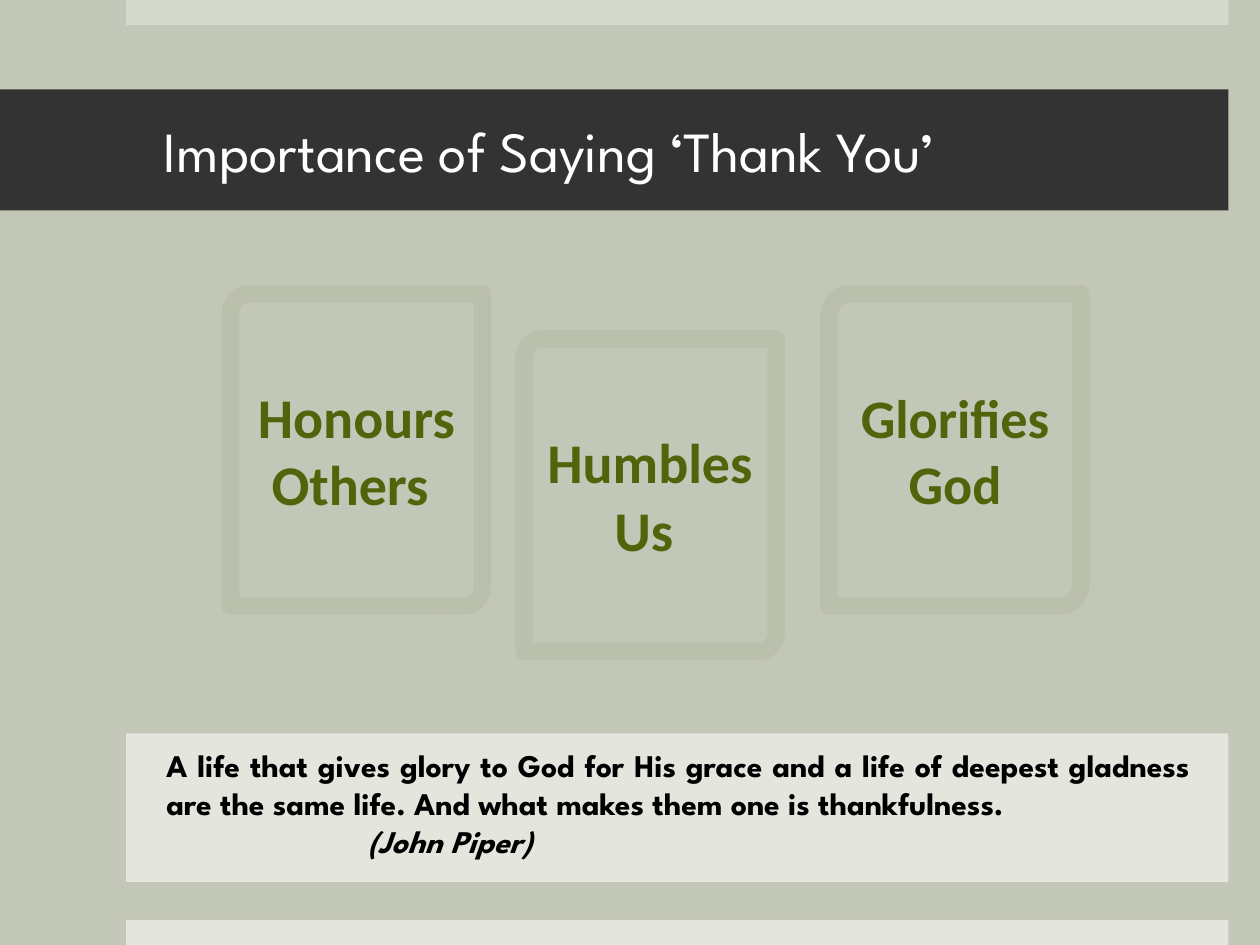
from dataclasses import dataclass

from pptx import Presentation
from pptx.dml.color import RGBColor
from pptx.enum.shapes import MSO_SHAPE
from pptx.enum.text import MSO_ANCHOR, MSO_AUTO_SIZE, PP_ALIGN
from pptx.util import Inches, Pt

RECTANGLE = MSO_SHAPE.RECTANGLE
ROUND_DIAGONAL = MSO_SHAPE.ROUND_2_DIAG_RECTANGLE
TOP, MIDDLE = MSO_ANCHOR.TOP, MSO_ANCHOR.MIDDLE
LEFT, CENTER, JUSTIFY = PP_ALIGN.LEFT, PP_ALIGN.CENTER, PP_ALIGN.JUSTIFY
NO_AUTOFIT = MSO_AUTO_SIZE.NONE
TITLE_ONLY = 5

COLORS = {
    "background": "C3C7B7",
    "top_band": "D6D9CD",
    "panel": "E4E6DE",
    "title_bar": "333333",
    "title_text": "FFFFFF",
    "quote_text": "000000",
    "card_border": "BBC0AC",
    "card_text": "51640B",
}
HEADING_FONT = "League Spartan"
CARD_FONT = "Calibri"
BAND_LEFT, BAND_WIDTH = 1, 8.75
CARD_WIDTH, CARD_HEIGHT = 2, 2.48


@dataclass(frozen=True)
class Card:
    text: str
    left: float
    top: float
    corner: float
    size: float = 32


CARDS = [
    Card("Honours Others ", 1.83, 2.33, 0.076),
    Card("Humbles Us ", 4.16, 2.69, 0.071),
    Card("Glorifies God", 6.58, 2.33, 0.086, 31),
]


def color(key: str) -> RGBColor:
    return RGBColor.from_string(COLORS[key])


def fill_solid(target, key: str) -> None:
    target.fill.solid()
    target.fill.fore_color.rgb = color(key)


def set_frame(shape, anchor, insets=(0.1, 0.05, 0.1, 0.05)) -> None:
    frame = shape.text_frame
    frame.word_wrap = True
    frame.auto_size = NO_AUTOFIT
    frame.vertical_anchor = anchor
    (frame.margin_left, frame.margin_top,
     frame.margin_right, frame.margin_bottom) = map(Inches, insets)


def write(paragraph, text: str, *, font: str, size: float, ink: str,
          align=LEFT, bold: bool = False, italic: bool = False,
          indent: float = 0) -> None:
    paragraph.alignment = align
    if indent:
        paragraph._p.get_or_add_pPr().set("marL", str(Inches(indent)))
    run = paragraph.add_run()
    run.text = text
    run.font.name = font
    run.font.size = Pt(size)
    run.font.bold = bold
    run.font.italic = italic
    run.font.color.rgb = color(ink)


def add_band(slide, top: float, height: float, key: str):
    band = slide.shapes.add_shape(
        RECTANGLE, Inches(BAND_LEFT), Inches(top), Inches(BAND_WIDTH), Inches(height))
    band.shadow.inherit = False
    fill_solid(band, key)
    band.line.fill.background()
    return band


def add_title(slide, text: str) -> None:
    title = slide.shapes.title
    title.left, title.top = Inches(0), Inches(0.71)
    title.width, title.height = Inches(9.75), Inches(0.96)
    fill_solid(title, "title_bar")
    set_frame(title, MIDDLE, (1.3, 0.05, 0.3, 0.05))
    write(title.text_frame.paragraphs[0], text,
          font=HEADING_FONT, size=32.4, ink="title_text")


def add_quote(slide, quote: str, author: str) -> None:
    panel = add_band(slide, 5.82, 1.18, "panel")
    set_frame(panel, TOP, (0.32, 0.1, 0.3, 0.1))
    style = dict(font=HEADING_FONT, size=18, ink="quote_text", bold=True)
    write(panel.text_frame.paragraphs[0], quote, align=JUSTIFY, **style)
    write(panel.text_frame.add_paragraph(), author, italic=True, indent=1.6, **style)


def add_card(slide, card: Card) -> None:
    shape = slide.shapes.add_shape(
        ROUND_DIAGONAL, Inches(card.left), Inches(card.top),
        Inches(CARD_WIDTH), Inches(CARD_HEIGHT))
    shape.shadow.inherit = False
    shape.adjustments[0] = card.corner
    shape.adjustments[1] = 0
    shape.fill.background()
    shape.line.color.rgb = color("card_border")
    shape.line.width = Pt(10)
    set_frame(shape, MIDDLE)
    write(shape.text_frame.paragraphs[0], card.text, font=CARD_FONT,
          size=card.size, ink="card_text", align=CENTER, bold=True)


def main() -> None:
    deck = Presentation()
    deck.slide_width, deck.slide_height = Inches(10), Inches(7.5)
    slide = deck.slides.add_slide(deck.slide_layouts[TITLE_ONLY])
    fill_solid(slide.background, "background")

    add_band(slide, 0, 0.2, "top_band")
    add_band(slide, 7.3, 0.2, "panel")
    add_title(slide, "Importance of Saying ‘Thank You’")
    add_quote(
        slide,
        "A life that gives glory to God for His grace and a life of deepest gladness "
        "are the same life. And what makes them one is thankfulness.",
        "(John Piper)")
    for card in CARDS:
        add_card(slide, card)

    deck.save("out.pptx")


if __name__ == "__main__":
    main()
